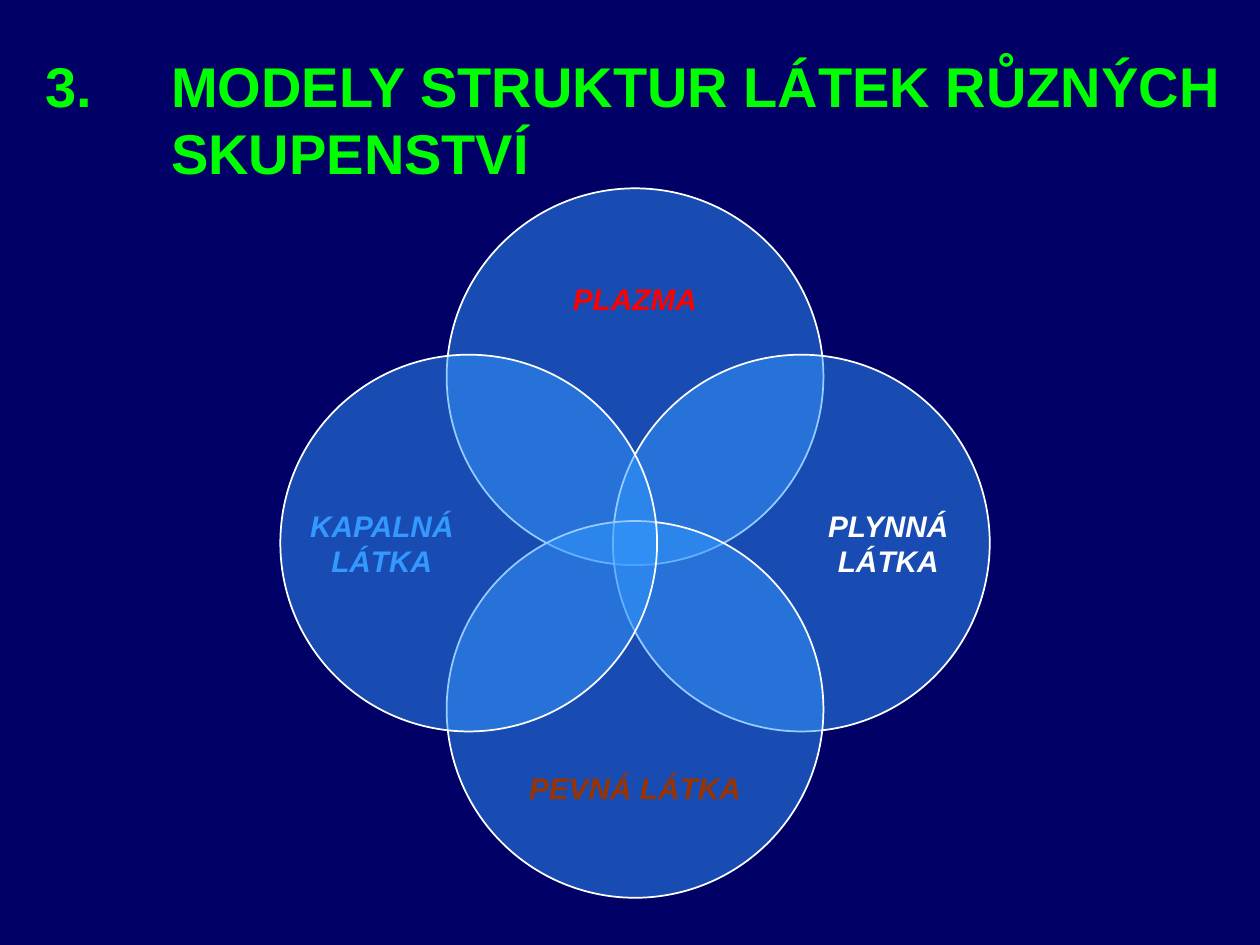
from dataclasses import dataclass

import pptx
import pptx.dml.color
import pptx.enum.shapes
import pptx.enum.text
import pptx.oxml.ns
import pptx.slide
import pptx.text.text
import pptx.util
from lxml import etree
from pptx.dml.color import RGBColor
from pptx.util import Inches

NAVY = RGBColor(0x00, 0x00, 0x66)
GREEN = RGBColor(0x00, 0xFF, 0x00)
BLUE = RGBColor(0x33, 0x99, 0xFF)
WHITE = RGBColor(0xFF, 0xFF, 0xFF)
RED = RGBColor(0xFF, 0x00, 0x00)
BROWN = RGBColor(0x99, 0x33, 0x00)

# Diagram geometry in inches
CENTER_X, CENTER_Y = 5.04, 4.31
DIAMETER = 2.99
CIRCLE_OFFSET = 1.32
LABEL_OFFSET_X, LABEL_OFFSET_Y = 2.01, 1.94
LABEL_LONG = 2.3


@dataclass(frozen=True)
class State:
    """One state of matter and its direction from the diagram's centre."""
    name: str
    color: RGBColor
    direction_x: int
    direction_y: int


STATES = (
    State("PLAZMA", RED, 0, -1),
    State("PLYNNÁ LÁTKA", WHITE, 1, 0),
    State("PEVNÁ LÁTKA", BROWN, 0, 1),
    State("KAPALNÁ LÁTKA", BLUE, -1, 0),
)


def format_runs(paragraph: pptx.text.text._Paragraph, size: float,
                color: RGBColor, italic: bool = False) -> None:
    for run in paragraph.runs:
        run.font.name = "Arial"
        run.font.size = pptx.util.Pt(size)
        run.font.bold = True
        run.font.italic = italic
        run.font.color.rgb = color


def draw_circle(slide: pptx.slide.Slide, state: State) -> None:
    left = CENTER_X + state.direction_x * CIRCLE_OFFSET - DIAMETER / 2
    top = CENTER_Y + state.direction_y * CIRCLE_OFFSET - DIAMETER / 2
    circle = slide.shapes.add_shape(
        pptx.enum.shapes.MSO_SHAPE.OVAL,
        Inches(left), Inches(top), Inches(DIAMETER), Inches(DIAMETER))
    circle.shadow.inherit = False
    circle.fill.solid()
    circle.fill.fore_color.rgb = BLUE
    circle.line.color.rgb = WHITE
    circle.line.width = pptx.util.Pt(1)
    # Half-transparent fill
    fill_color = circle.fill._xPr.find(
        pptx.oxml.ns.qn("a:solidFill")).find(pptx.oxml.ns.qn("a:srgbClr"))
    etree.SubElement(fill_color, pptx.oxml.ns.qn("a:alpha"), val="50000")


def draw_label(slide: pptx.slide.Slide, state: State) -> None:
    width, height = (1.15, LABEL_LONG) if state.direction_x else (LABEL_LONG, 0.95)
    left = CENTER_X + state.direction_x * LABEL_OFFSET_X - width / 2
    top = CENTER_Y + state.direction_y * LABEL_OFFSET_Y - height / 2
    label = slide.shapes.add_textbox(
        Inches(left), Inches(top), Inches(width), Inches(height))
    frame = label.text_frame
    frame.word_wrap = True
    frame.margin_left = frame.margin_right = 0
    frame.margin_top = frame.margin_bottom = 0
    frame.vertical_anchor = pptx.enum.text.MSO_ANCHOR.MIDDLE
    frame.text = state.name
    frame.paragraphs[0].alignment = pptx.enum.text.PP_ALIGN.CENTER
    format_runs(frame.paragraphs[0], 17, state.color, italic=True)


def draw_title(slide: pptx.slide.Slide) -> None:
    title = slide.shapes.add_textbox(
        Inches(0.26), Inches(0.36), Inches(9.74), Inches(1.17))
    frame = title.text_frame
    frame.word_wrap = True
    frame.auto_size = pptx.enum.text.MSO_AUTO_SIZE.SHAPE_TO_FIT_TEXT
    frame.text = "3.\tMODELY STRUKTUR LÁTEK RŮZNÝCH SKUPENSTVÍ"
    paragraph = frame.paragraphs[0]
    format_runs(paragraph, 32, GREEN)
    # Hanging indent: the number stands in the margin
    properties = paragraph._p.get_or_add_pPr()
    properties.set("marL", str(Inches(1)))
    properties.set("indent", str(-Inches(1)))


def main() -> None:
    presentation = pptx.Presentation()
    presentation.slide_width = Inches(10)
    presentation.slide_height = Inches(7.5)
    slide = presentation.slides.add_slide(presentation.slide_layouts[6])
    slide.background.fill.solid()
    slide.background.fill.fore_color.rgb = NAVY

    # Overlapping circles with their labels
    for state in STATES:
        draw_circle(slide, state)
        draw_label(slide, state)

    draw_title(slide)
    presentation.save("out.pptx")


if __name__ == "__main__":
    main()
